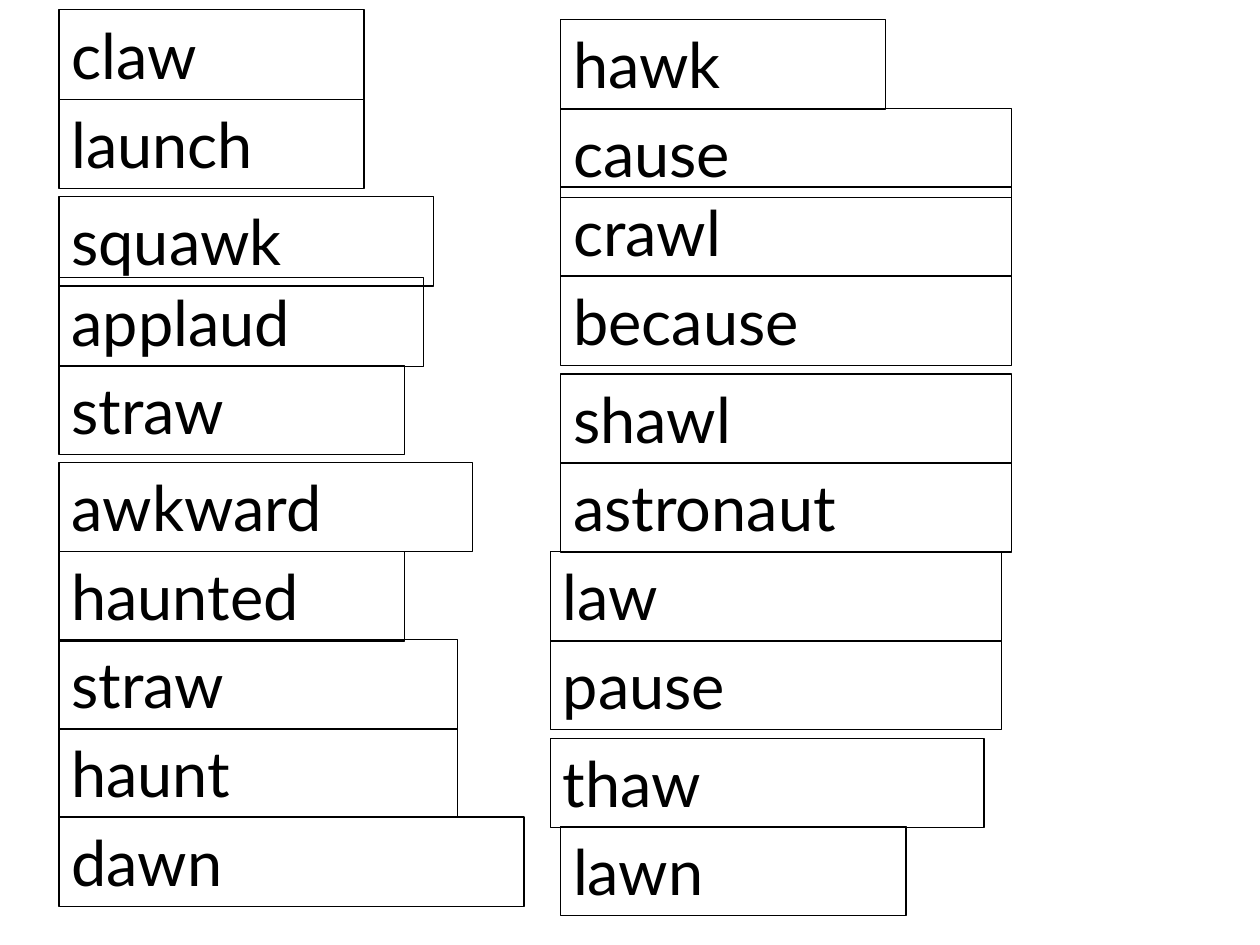
from pptx import Presentation
from pptx.dml.color import RGBColor
from pptx.enum.text import MSO_AUTO_SIZE
from pptx.util import Pt

INK = "000000"
FONT = "Lato"
CARD_HEIGHT = 51.1
LEFT_COLUMN, RIGHT_COLUMN, RIGHT_OUTDENT = 33.8, 320.4, 314.6

# Each column edge holds its cards: (word, top, width)
CARDS = {
    LEFT_COLUMN: [
        ("claw", 5.6, 174.2),
        ("launch", 56.8, 174.2),
        ("squawk", 112.3, 213.8),
        ("applaud", 158.4, 208.1),
        ("straw", 208.8, 197.3),
        ("awkward", 264.2, 236.2),
        ("haunted", 315.2, 197.3),
        ("straw", 365.4, 227.5),
        ("haunt", 416.2, 227.5),
        ("dawn", 466.9, 265.7),
    ],
    RIGHT_COLUMN: [
        ("hawk", 11.2, 185.8),
        ("cause", 61.9, 257.8),
        ("crawl", 106.8, 257.8),
        ("because", 157.6, 257.8),
        ("shawl", 213.8, 257.8),
        ("astronaut", 264.4, 257.8),
        ("lawn", 472.2, 197.3),
    ],
    RIGHT_OUTDENT: [
        ("law", 315.2, 257.8),
        ("pause", 365.8, 257.8),
        ("thaw", 421.9, 247.7),
    ],
}


def color(hex_string):
    return RGBColor.from_string(hex_string)


def add_card(slide, word, left, top, width):
    card = slide.shapes.add_textbox(Pt(left), Pt(top), Pt(width), Pt(CARD_HEIGHT))
    card.line.color.rgb = color(INK)
    card.line.width = Pt(0.75)
    frame = card.text_frame
    frame.word_wrap = True
    frame.auto_size = MSO_AUTO_SIZE.SHAPE_TO_FIT_TEXT
    run = frame.paragraphs[0].add_run()
    run.text = word
    run.font.name = FONT
    run.font.size = Pt(36)
    run.font.color.rgb = color(INK)


def main():
    deck = Presentation()
    deck.slide_width, deck.slide_height = Pt(720), Pt(540)
    slide = deck.slides.add_slide(deck.slide_layouts[6])
    for left, cards in CARDS.items():
        for word, top, width in cards:
            add_card(slide, word, left, top, width)
    deck.save("out.pptx")


if __name__ == "__main__":
    main()
